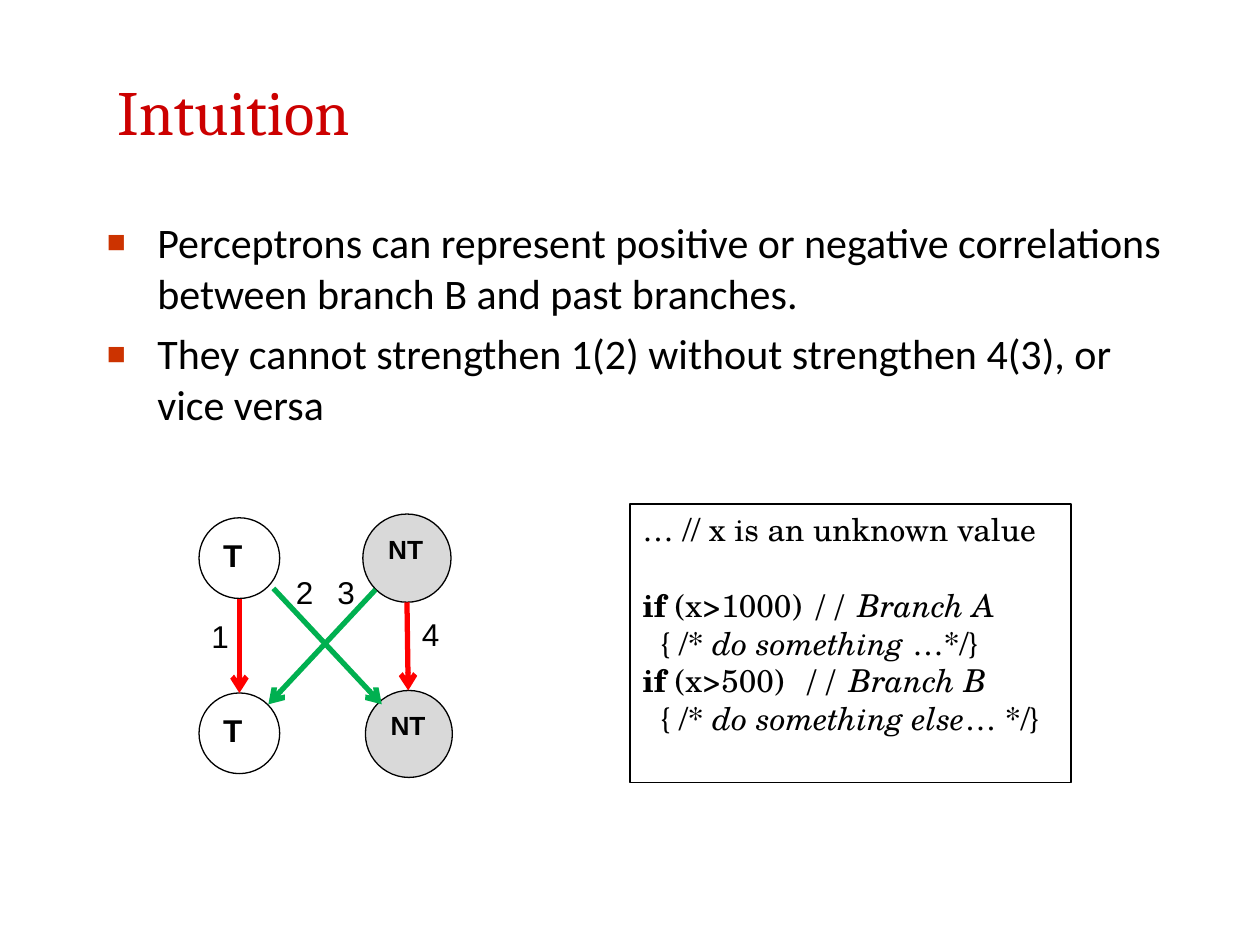
from dataclasses import dataclass

from lxml import etree
from pptx import Presentation
from pptx.dml.color import RGBColor
from pptx.enum.shapes import MSO_CONNECTOR, MSO_SHAPE
from pptx.enum.text import MSO_ANCHOR, PP_ALIGN
from pptx.oxml.ns import qn
from pptx.util import Inches, Pt

LEFT = PP_ALIGN.LEFT
TOP, MIDDLE = MSO_ANCHOR.TOP, MSO_ANCHOR.MIDDLE
OVAL, RECT = MSO_SHAPE.OVAL, MSO_SHAPE.RECTANGLE
STRAIGHT = MSO_CONNECTOR.STRAIGHT


@dataclass(frozen=True)
class Theme:
    title: str = "CC0000"
    bullet: str = "CC3300"
    ink: str = "000000"
    white: str = "FFFFFF"
    gray: str = "D9D9D9"
    red: str = "FF0000"
    green: str = "00B050"
    head: str = "Cambria"
    body: str = "Calibri"
    label: str = "Arial"
    code: str = "TeX Gyre Schola"
    head_size: float = 36
    body_size: float = 24
    size: float = 18
    small: float = 15
    thin: float = 0.75
    thick: float = 3


@dataclass(frozen=True)
class Node:
    text: str
    x: float
    y: float
    side: float
    fill: str
    size: float


@dataclass(frozen=True)
class Arrow:
    start: tuple[float, float]
    end: tuple[float, float]
    color: str


@dataclass(frozen=True)
class Label:
    text: str
    x: float
    y: float


@dataclass(frozen=True)
class Part:
    text: str
    bold: bool = False
    italic: bool = False


THEME = Theme()

POINTS = [
    "Perceptrons can represent positive or negative correlations "
    "between branch B and past branches.",
    "They cannot strengthen 1(2) without strengthen 4(3), or vice versa",
]
NODES = [
    Node("T", 1.58, 4.11, 0.64, THEME.white, THEME.size),
    Node("NT", 2.88, 4.08, 0.7, THEME.gray, THEME.small),
    Node("T", 1.58, 5.5, 0.64, THEME.white, THEME.size),
    Node("NT", 2.9, 5.48, 0.69, THEME.gray, THEME.small),
]
ARROWS = [
    Arrow((1.9, 4.75), (1.9, 5.5), THEME.red),
    Arrow((3.23, 4.78), (3.24, 5.48), THEME.red),
    Arrow((2.17, 4.67), (3.03, 5.59), THEME.green),
    Arrow((2.98, 4.68), (2.13, 5.59), THEME.green),
]
LABELS = [
    Label("1", 1.58, 4.85),
    Label("2", 2.25, 4.5),
    Label("3", 2.58, 4.5),
    Label("4", 3.25, 4.83),
]
CODE = [
    [Part("… // x is an unknown value")],
    [Part("if", bold=True), Part(" (x>1000) "), Part("// Branch A", italic=True)],
    [Part("  { /* "), Part("do something ", italic=True), Part("…*/}")],
    [Part("if", bold=True), Part(" (x>500)  "), Part("// Branch B", italic=True)],
    [Part("  { /* "), Part("do something else", italic=True), Part("… */}")],
]


def add_run(para, part: Part, font: str, size: float, color: str = THEME.ink) -> None:
    run = para.add_run()
    run.text = part.text
    run.font.name, run.font.size = font, Pt(size)
    run.font.bold, run.font.italic = part.bold, part.italic
    run.font.color.rgb = RGBColor.from_string(color)


def next_para(frame, index: int):
    """Reuse the frame's first paragraph, then append new ones."""
    para = frame.paragraphs[0] if index == 0 else frame.add_paragraph()
    para.alignment = LEFT
    return para


def add_bullet(para) -> None:
    props = para._p.get_or_add_pPr()
    props.set("marL", str(Inches(0.4)))
    props.set("indent", str(-Inches(0.4)))
    color = etree.SubElement(props, qn("a:buClr"))
    etree.SubElement(color, qn("a:srgbClr"), val=THEME.bullet)
    etree.SubElement(props, qn("a:buSzPct"), val="75000")
    etree.SubElement(props, qn("a:buFont"), typeface=THEME.label)
    etree.SubElement(props, qn("a:buChar"), char="■")


def add_title(slide, text: str) -> None:
    title = slide.shapes.title
    title.left, title.top = Inches(0.83), Inches(0.25)
    title.width, title.height = Inches(8.67), Inches(1.25)
    frame = title.text_frame
    frame.vertical_anchor = MIDDLE
    add_run(next_para(frame, 0), Part(text), THEME.head, THEME.head_size, THEME.title)


def add_body(slide, points: list[str]) -> None:
    box = slide.shapes.add_textbox(Inches(0.75), Inches(1.67), Inches(8.75), Inches(5.25))
    frame = box.text_frame
    frame.word_wrap = True
    for i, text in enumerate(points):
        para = next_para(frame, i)
        para.space_before = Pt(6 if i else 0)
        add_bullet(para)
        add_run(para, Part(text), THEME.body, THEME.body_size)


def add_box(slide, kind, x: float, y: float, w: float, h: float):
    """Add an outlined, unfilled shape whose text starts at the top."""
    shape = slide.shapes.add_shape(kind, Inches(x), Inches(y), Inches(w), Inches(h))
    shape.shadow.inherit = False
    shape.fill.background()
    shape.line.color.rgb = RGBColor.from_string(THEME.ink)
    shape.line.width = Pt(THEME.thin)
    shape.text_frame.vertical_anchor = TOP
    return shape


def add_node(slide, node: Node) -> None:
    shape = add_box(slide, OVAL, node.x, node.y, node.side, node.side)
    shape.fill.solid()
    shape.fill.fore_color.rgb = RGBColor.from_string(node.fill)
    shape.text_frame.margin_right = 0
    para = next_para(shape.text_frame, 0)
    add_run(para, Part(node.text, bold=True), THEME.label, node.size)


def add_arrow(slide, arrow: Arrow) -> None:
    ends = [Inches(v) for v in arrow.start + arrow.end]
    line = slide.shapes.add_connector(STRAIGHT, *ends)
    line.line.color.rgb = RGBColor.from_string(arrow.color)
    line.line.width = Pt(THEME.thick)
    etree.SubElement(line.line._get_or_add_ln(), qn("a:tailEnd"), type="arrow")
    etree.SubElement(line._element.spPr, qn("a:effectLst"))


def add_label(slide, label: Label) -> None:
    box = slide.shapes.add_textbox(Inches(label.x), Inches(label.y), Inches(0.34), Inches(0.4))
    box.text_frame.word_wrap = False
    add_run(next_para(box.text_frame, 0), Part(label.text), THEME.label, THEME.size)


def add_code(slide, lines: list[list[Part]]) -> None:
    frame = add_box(slide, RECT, 5, 4, 3.5, 2.21).text_frame
    for i, parts in enumerate(lines):
        para = next_para(frame, i)
        para.space_before = Pt(21.6 if i == 1 else 0)
        for part in parts:
            add_run(para, part, THEME.code, THEME.size)


def main() -> None:
    deck = Presentation()
    deck.slide_width, deck.slide_height = Inches(10), Inches(7.5)
    slide = deck.slides.add_slide(deck.slide_layouts[5])
    add_title(slide, "Intuition")
    add_body(slide, POINTS)
    for node in NODES:
        add_node(slide, node)
    for arrow in ARROWS:
        add_arrow(slide, arrow)
    add_code(slide, CODE)
    for label in LABELS:
        add_label(slide, label)
    deck.save("out.pptx")


if __name__ == "__main__":
    main()
